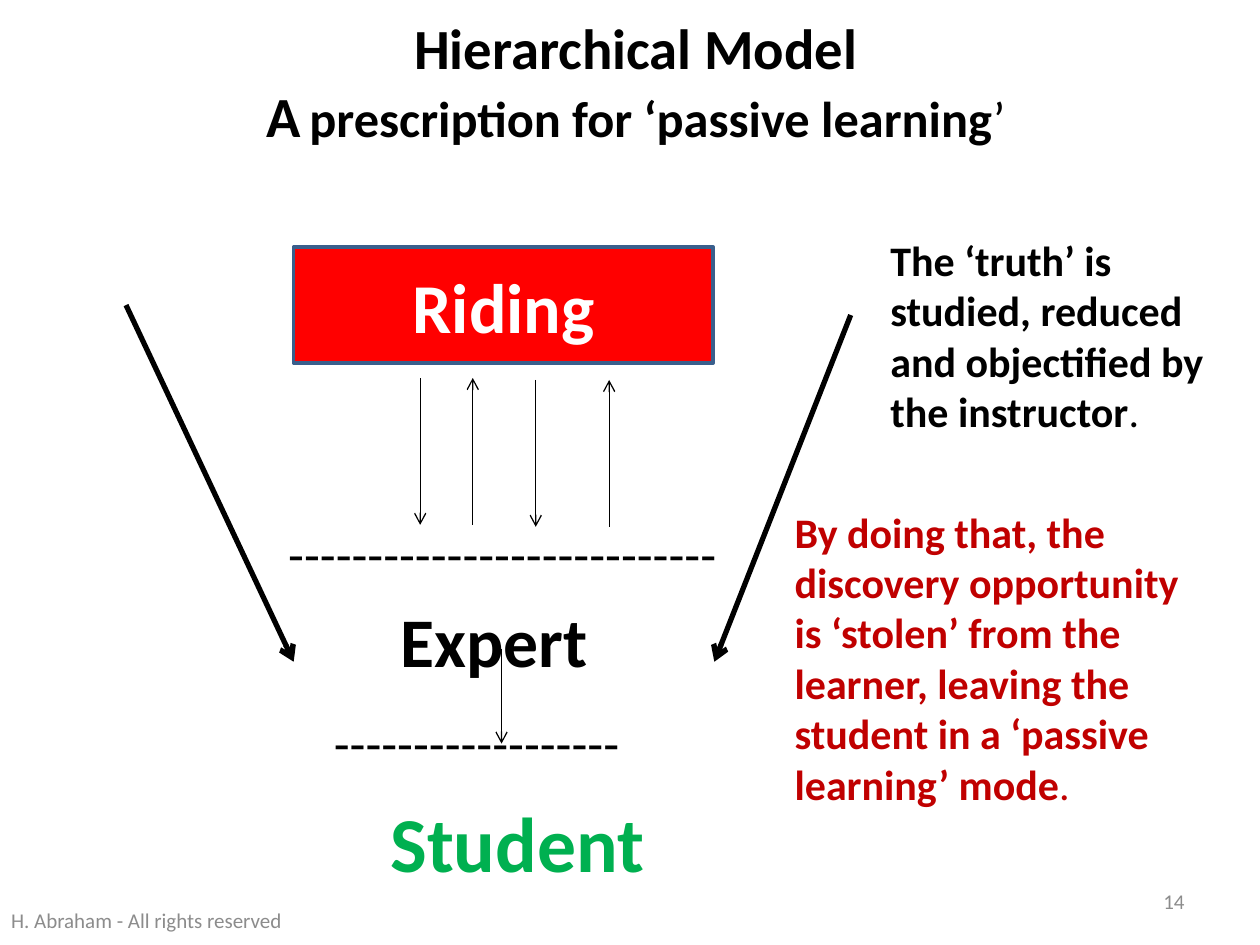
import dataclasses

import pptx
import pptx.dml.color
import pptx.enum.shapes
import pptx.enum.text
import pptx.oxml.ns
import pptx.util
from lxml import etree

Cm = pptx.util.Cm
Pt = pptx.util.Pt
ALIGN = pptx.enum.text.PP_ALIGN
ANCHOR = pptx.enum.text.MSO_ANCHOR
FIT = pptx.enum.text.MSO_AUTO_SIZE
qualified = pptx.oxml.ns.qn


@dataclasses.dataclass(frozen=True)
class Theme:
    font: str = "Calibri"
    black: str = "000000"
    white: str = "FFFFFF"
    red: str = "FF0000"
    dark_red: str = "C00000"
    green: str = "00B050"
    gray: str = "8C8C8C"
    border: str = "3A5F8C"
    title: float = 32.4
    title_gap: float = 21.6
    subtitle: float = 28.8
    box: float = 40
    note: float = 24
    small: float = 12
    dashes: float = 29.6
    expert: float = 39.8
    student: float = 44.4


def rgb(color):
    return pptx.dml.color.RGBColor.from_string(color)


def add_text(paragraph, text, *, font, size, color, bold=False):
    """Append one formatted run to a paragraph."""
    run = paragraph.add_run()
    run.text = text
    run.font.name = font
    run.font.size = Pt(size)
    run.font.bold = bold
    run.font.color.rgb = rgb(color)


class SlideBuilder:
    def __init__(self, slide, theme):
        self.slide = slide
        self.theme = theme

    def place(self, shape, left, top, width, height):
        shape.left, shape.top = Cm(left), Cm(top)
        shape.width, shape.height = Cm(width), Cm(height)

    def run(self, paragraph, text, size, color=None, bold=False):
        add_text(paragraph, text, font=self.theme.font, size=size,
                 color=color or self.theme.black, bold=bold)

    def title(self, first_line, second_line, box):
        """Each line is a list of (text, size, bold)."""
        shape = self.slide.shapes.title
        self.place(shape, *box)
        shape.fill.solid()
        shape.fill.fore_color.rgb = rgb(self.theme.white)
        frame = shape.text_frame
        frame.auto_size = FIT.NONE
        frame.vertical_anchor = ANCHOR.MIDDLE
        paragraph = frame.paragraphs[0]
        paragraph.alignment = ALIGN.CENTER
        for text, size, bold in first_line:
            self.run(paragraph, text, size, bold=bold)
        paragraph.add_line_break()
        for text, size, bold in second_line:
            self.run(paragraph, text, size, bold=bold)

    def levels(self, rows, box):
        """Each row is (text, size, color, bold, indent in cm, space before)."""
        shape = self.slide.placeholders[1]
        self.place(shape, *box)
        frame = shape.text_frame
        frame.auto_size = FIT.NONE
        frame.vertical_anchor = ANCHOR.BOTTOM
        frame.margin_left = frame.margin_right = 0
        frame.margin_top = frame.margin_bottom = 0
        for index, (text, size, color, bold, indent, gap) in enumerate(rows):
            paragraph = frame.add_paragraph() if index else frame.paragraphs[0]
            paragraph.space_before = Pt(gap)
            self.run(paragraph, text, size, color, bold)
            properties = paragraph._p.get_or_add_pPr()
            properties.set("marL", str(Cm(indent)))
            properties.set("indent", "0")
            etree.SubElement(properties, qualified("a:buNone"))

    def box(self, text, box):
        shape = self.slide.shapes.add_shape(
            pptx.enum.shapes.MSO_SHAPE.RECTANGLE, *map(Cm, box))
        shape.shadow.inherit = False
        shape.fill.solid()
        shape.fill.fore_color.rgb = rgb(self.theme.red)
        shape.line.color.rgb = rgb(self.theme.border)
        shape.line.width = Pt(2)
        shape.text_frame.vertical_anchor = ANCHOR.MIDDLE
        paragraph = shape.text_frame.paragraphs[0]
        paragraph.alignment = ALIGN.CENTER
        self.run(paragraph, text, self.theme.box, self.theme.white, True)

    def arrow(self, start, end, width=0.75):
        connector = self.slide.shapes.add_connector(
            pptx.enum.shapes.MSO_CONNECTOR.STRAIGHT, *map(Cm, start + end))
        connector.line.color.rgb = rgb(self.theme.black)
        connector.line.width = Pt(width)
        properties = connector._element.spPr
        etree.SubElement(properties.find(qualified("a:ln")),
                         qualified("a:tailEnd"), type="arrow")
        etree.SubElement(properties, qualified("a:effectLst"))

    def text_box(self, box, alignment, anchor, fit):
        frame = self.slide.shapes.add_textbox(*map(Cm, box)).text_frame
        frame.word_wrap = True
        frame.auto_size = fit
        frame.vertical_anchor = anchor
        frame.paragraphs[0].alignment = alignment
        return frame.paragraphs[0]

    def note(self, text, color, box):
        paragraph = self.text_box(box, ALIGN.LEFT, ANCHOR.TOP, FIT.SHAPE_TO_FIT_TEXT)
        self.run(paragraph, text, self.theme.note, color, True)
        self.run(paragraph, ".", self.theme.note, color)

    def footer(self, text, alignment, box):
        paragraph = self.text_box(box, alignment, ANCHOR.MIDDLE, FIT.NONE)
        self.run(paragraph, text, self.theme.small, self.theme.gray)


def main():
    presentation = pptx.Presentation()
    presentation.slide_width, presentation.slide_height = Cm(25.4), Cm(19.05)
    theme = Theme()
    slide = presentation.slides.add_slide(presentation.slide_layouts[1])
    builder = SlideBuilder(slide, theme)

    # Title
    builder.title(
        [("Hierarchical Model", theme.title, True)],
        [("A", theme.title, True), (" ", theme.title_gap, True),
         ("prescription for ‘passive learning", theme.subtitle, True),
         ("’", theme.subtitle, False)],
        (1.07, 0.03, 23.5, 3.18))

    # Levels of the hierarchy
    builder.levels([
        ("-" * 27, theme.dashes, theme.black, False, 4.54, 0),
        ("Expert", theme.expert, theme.black, True, 6.8, 8),
        ("-" * 18, theme.dashes, theme.black, False, 5.46, 17),
        ("Student", theme.student, theme.green, True, 6.6, 12.5),
    ], (1.27, 2.97, 22.86, 14.94))
    builder.box("Riding", (5.92, 4.98, 8.46, 2.34))

    # Outer arrows
    builder.arrow((2.54, 6.15), (5.92, 13.34), width=3)
    builder.arrow((17.15, 6.35), (14.4, 13.34), width=3)

    # Exchange between riding and expert, alternately down and up
    for index, (x, top) in enumerate(
            [(8.47, 7.62), (9.53, 7.62), (10.8, 7.66), (12.28, 7.66)]):
        ends = [(x, top), (x, top + 2.96)]
        if index % 2:
            ends.reverse()
        builder.arrow(*ends)

    # Expert to student
    builder.arrow((10.11, 13.08), (10.11, 14.99))

    # Notes
    builder.note("By doing that, the discovery opportunity is ‘stolen’ from the "
                 "learner, leaving the student in a ‘passive learning’ mode",
                 theme.dark_red, (15.77, 10.08, 8.79, 6.4))
    builder.note("The ‘truth’ is studied, reduced and objectified by the instructor",
                 theme.black, (17.7, 4.6, 6.86, 4.37))

    # Footer
    builder.footer("14", ALIGN.RIGHT, (18.21, 17.65, 5.92, 1.02))
    builder.footer("H. Abraham - All rights reserved", ALIGN.CENTER,
                   (-1.07, 18.03, 8.05, 1.02))

    presentation.save("out.pptx")


if __name__ == "__main__":
    main()
